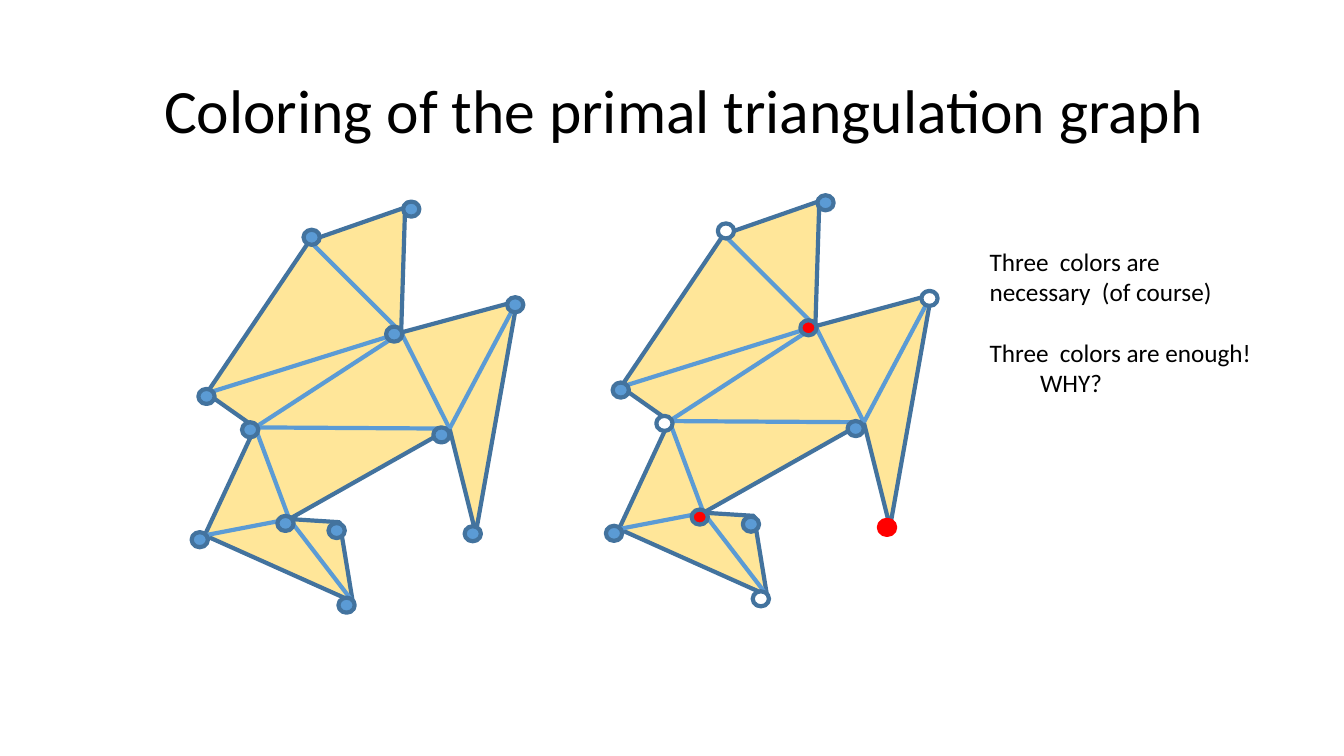
"""Draw a triangulated polygon beside its three-coloured vertex graph."""
from lxml import etree
from pptx import Presentation
from pptx.dml.color import RGBColor as RGB
from pptx.enum.shapes import MSO_CONNECTOR as CONN, MSO_SHAPE as SHAPE
from pptx.enum.text import MSO_ANCHOR as ANCHOR
from pptx.oxml.ns import qn
from pptx.util import Cm, Pt

COLORS = {"black": "000000", "white": "FFFFFF", "red": "FF0000",
          "sand": "FFE699", "blue": "5B9BD5", "navy": "43739E"}

CORNERS = {"brow": (7.8, 6.07), "left": (5.21, 9.91), "waist": (6.43, 10.77),
           "foot": (5.16, 13.49), "heel": (8.89, 15.16), "toe": (8.56, 13.16),
           "knee": (7.29, 13.08), "hip": (11.33, 10.8), "spike": (11.99, 13.44),
           "right": (13.03, 7.59), "centre": (10.11, 8.38), "top": (10.21, 5.23)}
DOTS = {"foot": (4.83, 13.41), "left": (5, 9.8), "spike": (11.71, 13.26),
        "hip": (10.92, 10.77), "right": (12.78, 7.49), "brow": (7.65, 5.79),
        "top": (10.16, 5.08), "heel": (8.53, 15.06), "centre": (9.73, 8.23),
        "toe": (8.28, 13.18), "knee": (6.99, 13), "waist": (6.1, 10.64)}
DIAGONALS = [("brow", "centre"), ("left", "centre"), ("centre", "hip"),
             ("hip", "right"), ("waist", "centre"), ("waist", "hip"),
             ("waist", "knee"), ("knee", "foot"), ("knee", "heel")]
COLORING = {"brow": "white", "right": "white", "heel": "white", "waist": "white",
            "centre": "red", "knee": "red", "spike": "red"}


def rgb(name):
    """Return the palette colour called name."""
    return RGB.from_string(COLORS[name])


def paint(sp, fill, line):
    """Give a shape a flat fill and a 3 pt outline."""
    sp.shadow.inherit = False
    sp.fill.solid()
    sp.fill.fore_color.rgb = rgb(fill)
    sp.line.color.rgb = rgb(line)
    sp.line.width = Pt(3)


def add_text(s, text, box, size=18, anchor=ANCHOR.TOP, spacing=None, gaps=()):
    """Add a text box with one paragraph per line of text."""
    tf = s.shapes.add_textbox(*map(Cm, box)).text_frame
    tf.word_wrap = True
    tf.vertical_anchor = anchor
    for i, line in enumerate(text.split("\n")):
        p = tf.paragraphs[0] if i == 0 else tf.add_paragraph()
        p.line_spacing = spacing
        if i in gaps:
            p.space_before = Pt(22)
        r = p.add_run()
        r.text = line
        r.font.name = "Calibri"
        r.font.size = Pt(size)
        r.font.color.rgb = rgb("black")


def add_polygon(s, points):
    """Add the filled polygon through points."""
    start, *rest = [(Cm(x), Cm(y)) for x, y in points]
    fb = s.shapes.build_freeform(*start)
    fb.add_line_segments(rest, close=True)
    paint(fb.convert_to_shape(), "sand", "navy")


def add_diagonal(s, a, b):
    """Add a triangulation edge from a to b."""
    c = s.shapes.add_connector(CONN.STRAIGHT, *map(Cm, (*a, *b)))
    c.line.color.rgb = rgb("blue")
    c.line.width = Pt(3)
    etree.SubElement(c.element.spPr, qn("a:effectLst"))


def add_dot(s, x, y, fill, line):
    """Add a vertex marker with its top left corner at x, y."""
    paint(s.shapes.add_shape(SHAPE.OVAL, Cm(x), Cm(y), Cm(0.41), Cm(0.38)), fill, line)


def add_graph(s, dx, dy, coloring):
    """Add the triangulated polygon, shifted by dx, dy, with coloured vertices."""
    corners = {name: (x + dx, y + dy) for name, (x, y) in CORNERS.items()}
    add_polygon(s, corners.values())
    for a, b in DIAGONALS:
        add_diagonal(s, corners[a], corners[b])
    for name, (x, y) in DOTS.items():
        line = "red" if name == "spike" and coloring else "navy"
        add_dot(s, x + dx, y + dy, coloring.get(name, "blue"), line)


def main():
    """Build and save the slide."""
    prs = Presentation()
    prs.slide_width, prs.slide_height = Cm(33.87), Cm(19.05)
    s = prs.slides.add_slide(prs.slide_layouts[6])
    add_text(s, "　Coloring of the primal triangulation graph", (2.33, 1.01, 29.21, 3.68),
             size=44, anchor=ANCHOR.MIDDLE, spacing=0.9)
    add_graph(s, 0, 0, {})
    add_graph(s, 10.44, -0.16, COLORING)
    add_text(s, "Three  colors are necessary  (of course)\nThree  colors are enough!\n\tWHY?",
             (24.69, 6.07, 7.34, 4.11), gaps=(1,))
    prs.save("out.pptx")


if __name__ == "__main__":
    main()
